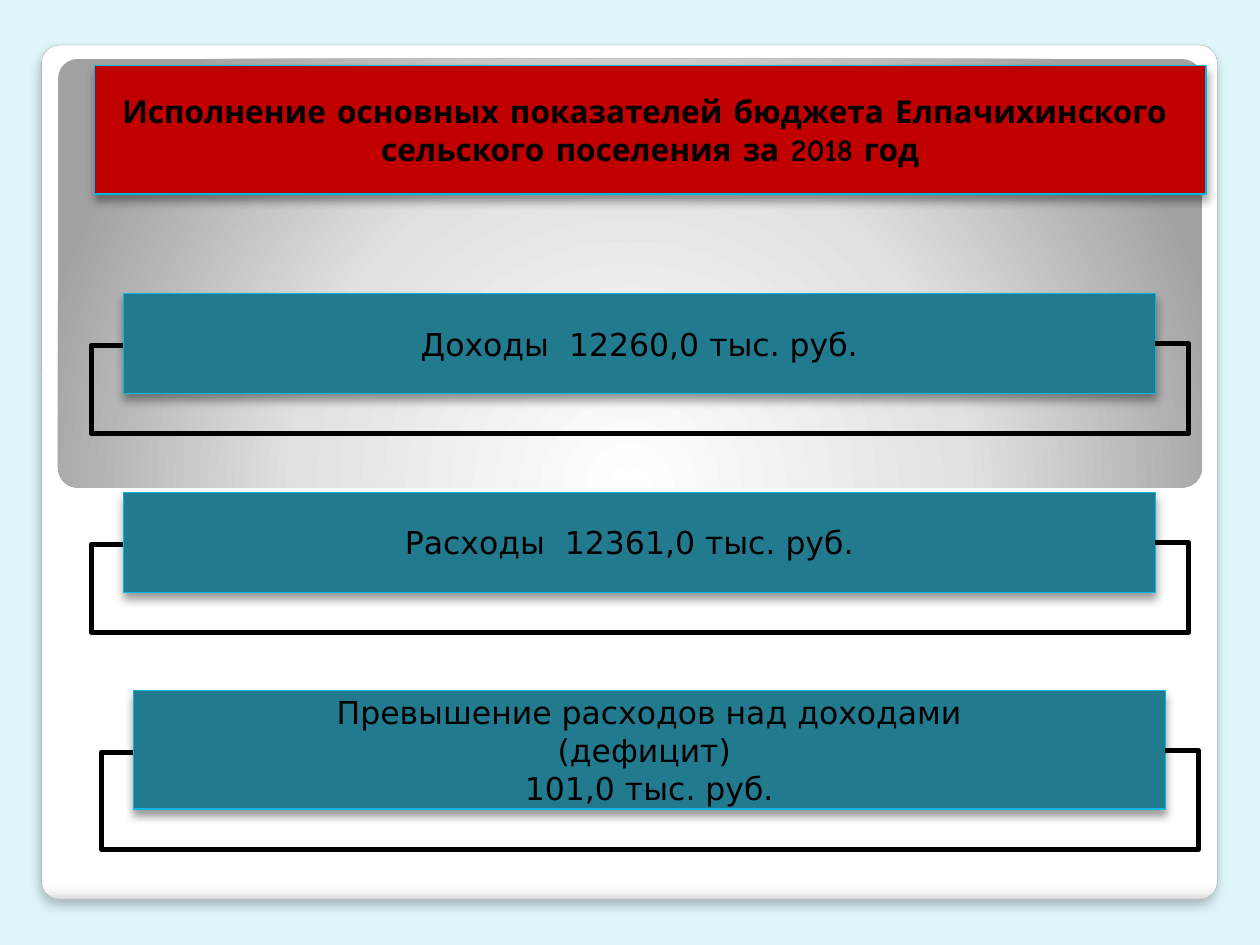
from dataclasses import dataclass

from pptx import Presentation
from pptx.dml.color import RGBColor
from pptx.enum.shapes import MSO_CONNECTOR, MSO_SHAPE
from pptx.enum.text import MSO_ANCHOR, MSO_AUTO_SIZE, PP_ALIGN
from pptx.oxml import parse_xml
from pptx.oxml.ns import nsdecls, qn
from pptx.util import Cm, Pt

ELBOW = MSO_CONNECTOR.ELBOW
RECT, ROUND_RECT = MSO_SHAPE.RECTANGLE, MSO_SHAPE.ROUNDED_RECTANGLE
MIDDLE, CENTER, NO_FIT = MSO_ANCHOR.MIDDLE, PP_ALIGN.CENTER, MSO_AUTO_SIZE.NONE


@dataclass(frozen=True)
class Theme:
    background: str = "DEF5FA"
    title_fill: str = "C00000"
    bar_fill: str = "227A8F"
    border: str = "08B8E4"
    ink: str = "000000"
    card_border: str = "A4A4A4"
    title_font: str = "Comic Neue"
    bar_font: str = "DejaVu Sans"
    size: float = 18


@dataclass(frozen=True)
class Box:
    """Position and size in centimetres."""
    left: float
    top: float
    width: float
    height: float

    def lengths(self) -> tuple:
        return Cm(self.left), Cm(self.top), Cm(self.width), Cm(self.height)


@dataclass(frozen=True)
class Shadow:
    alpha: int
    blur: float
    distance: float


@dataclass(frozen=True)
class Panel:
    box: Box
    corner: float
    stops: tuple
    direction: str


@dataclass(frozen=True)
class Bar:
    box: Box
    lines: tuple


THEME = Theme()
CARD_SHADOW = Shadow(25, 6, 4)
BAR_SHADOW = Shadow(40, 5.2, 3)

CARD = Panel(Box(0.84, 0.91, 23.7, 17.22), 0.021,
             ((0, "FFFFFF"), (98, "FFFFFF"), (99, "F7F7F7"), (100, "DADADA")),
             '<a:lin ang="5400000" scaled="0"/>')
GLOW = Panel(Box(1.17, 1.19, 23.06, 8.64), 0.046,
             ((0, "FFFFFF"), (55, "E1E1E1"), (100, "A2A2A2")),
             '<a:path path="circle"><a:fillToRect l="50000" t="175000" '
             'r="50000" b="-75000"/></a:path>')

TITLE_BOX = Box(1.91, 1.32, 22.4, 2.59)
TITLE = ("Исполнение основных показателей бюджета Елпачихинского ",
         "сельского поселения за 2018 год")
BARS = (
    Bar(Box(2.49, 5.92, 20.8, 2.01), ("Доходы  12260,0 тыс. руб.",)),
    Bar(Box(2.49, 9.93, 20.8, 2.01), ("Расходы  12361,0 тыс. руб.  ",)),
    Bar(Box(2.69, 13.92, 20.8, 2.39),
        ("Превышение расходов над доходами", "(дефицит) ", "101,0 тыс. руб.")),
)


def rgb(color: str) -> RGBColor:
    return RGBColor.from_string(color)


def set_line(line, color: str, width: float) -> None:
    line.color.rgb = rgb(color)
    line.width = Pt(width)


def set_shadow(sp, shadow: Shadow) -> None:
    sp.shadow.inherit = False
    sp._element.spPr.find(qn("a:effectLst")).append(parse_xml(
        f'<a:outerShdw {nsdecls("a")} blurRad="{Pt(shadow.blur)}" '
        f'dist="{Pt(shadow.distance)}" dir="5400000" rotWithShape="0">'
        f'<a:srgbClr val="{THEME.ink}"><a:alpha val="{shadow.alpha * 1000}"/>'
        '</a:srgbClr></a:outerShdw>'))


def add_panel(s, panel: Panel):
    sp = s.shapes.add_shape(ROUND_RECT, *panel.box.lengths())
    sp.adjustments[0] = panel.corner
    sp.shadow.inherit = False
    sp.line.fill.background()
    sp.fill.background()
    stops = "".join(f'<a:gs pos="{pos * 1000}"><a:srgbClr val="{color}"/></a:gs>'
                    for pos, color in panel.stops)
    spPr = sp._element.spPr
    spPr.replace(spPr.find(qn("a:noFill")), parse_xml(
        f'<a:gradFill {nsdecls("a")} rotWithShape="1"><a:gsLst>{stops}</a:gsLst>'
        f'{panel.direction}</a:gradFill>'))
    return sp


def style_box(sp, fill: str, lines: tuple, font: str, bold: bool = False) -> None:
    sp.fill.solid()
    sp.fill.fore_color.rgb = rgb(fill)
    set_line(sp.line, THEME.border, 0.75)
    set_shadow(sp, BAR_SHADOW)
    tf = sp.text_frame
    tf.word_wrap = True
    tf.auto_size = NO_FIT
    tf.vertical_anchor = MIDDLE
    for i, text in enumerate(lines):
        p = tf.add_paragraph() if i else tf.paragraphs[0]
        p.alignment = CENTER
        r = p.add_run()
        r.text = text
        r.font.name = font
        r.font.size = Pt(THEME.size)
        r.font.bold = bold
        r.font.color.rgb = rgb(THEME.ink)


def add_title(s) -> None:
    sp = s.shapes.title
    sp.left, sp.top, sp.width, sp.height = TITLE_BOX.lengths()
    style_box(sp, THEME.title_fill, TITLE, THEME.title_font, bold=True)
    s.shapes._spTree.append(sp._element)  # in front of the panels


def add_loop(s, box: Box) -> None:
    """Join the two sides of a bar by an elbow line that runs below it."""
    rise, left_gap, right_gap, bottom_gap = 0.04, 0.64, 0.67, 0.81
    start = box.top + 0.52 * box.height
    drop = box.top + box.height + bottom_gap - start
    line = s.shapes.add_connector(ELBOW, Cm(box.left), Cm(start),
                                  Cm(box.left + box.width), Cm(start - rise))
    set_line(line.line, THEME.ink, 3)
    spPr = line._element.spPr
    xfrm = spPr.find(qn("a:xfrm"))
    xfrm.attrib.pop("flipV")
    xfrm.set("rot", "10800000")
    xfrm.set("flipH", "1")
    ratios = (-left_gap / box.width, -drop / rise, 1 + right_gap / box.width)
    guides = "".join(f'<a:gd name="adj{i}" fmla="val {round(ratio * 100000)}"/>'
                     for i, ratio in enumerate(ratios, 1))
    spPr.replace(spPr.find(qn("a:prstGeom")), parse_xml(
        f'<a:prstGeom {nsdecls("a")} prst="bentConnector5">'
        f'<a:avLst>{guides}</a:avLst></a:prstGeom>'))
    spPr.append(parse_xml(f'<a:effectLst {nsdecls("a")}/>'))


def main() -> None:
    prs = Presentation()
    prs.slide_width, prs.slide_height = Cm(25.4), Cm(19.05)
    s = prs.slides.add_slide(prs.slide_layouts.get_by_name("Title Only"))
    s.background.fill.solid()
    s.background.fill.fore_color.rgb = rgb(THEME.background)

    card = add_panel(s, CARD)
    set_line(card.line, THEME.card_border, 0.16)
    set_shadow(card, CARD_SHADOW)
    add_panel(s, GLOW)
    add_title(s)
    for bar in BARS:
        sp = s.shapes.add_shape(RECT, *bar.box.lengths())
        style_box(sp, THEME.bar_fill, bar.lines, THEME.bar_font)
        add_loop(s, bar.box)
    prs.save("out.pptx")


if __name__ == "__main__":
    main()
